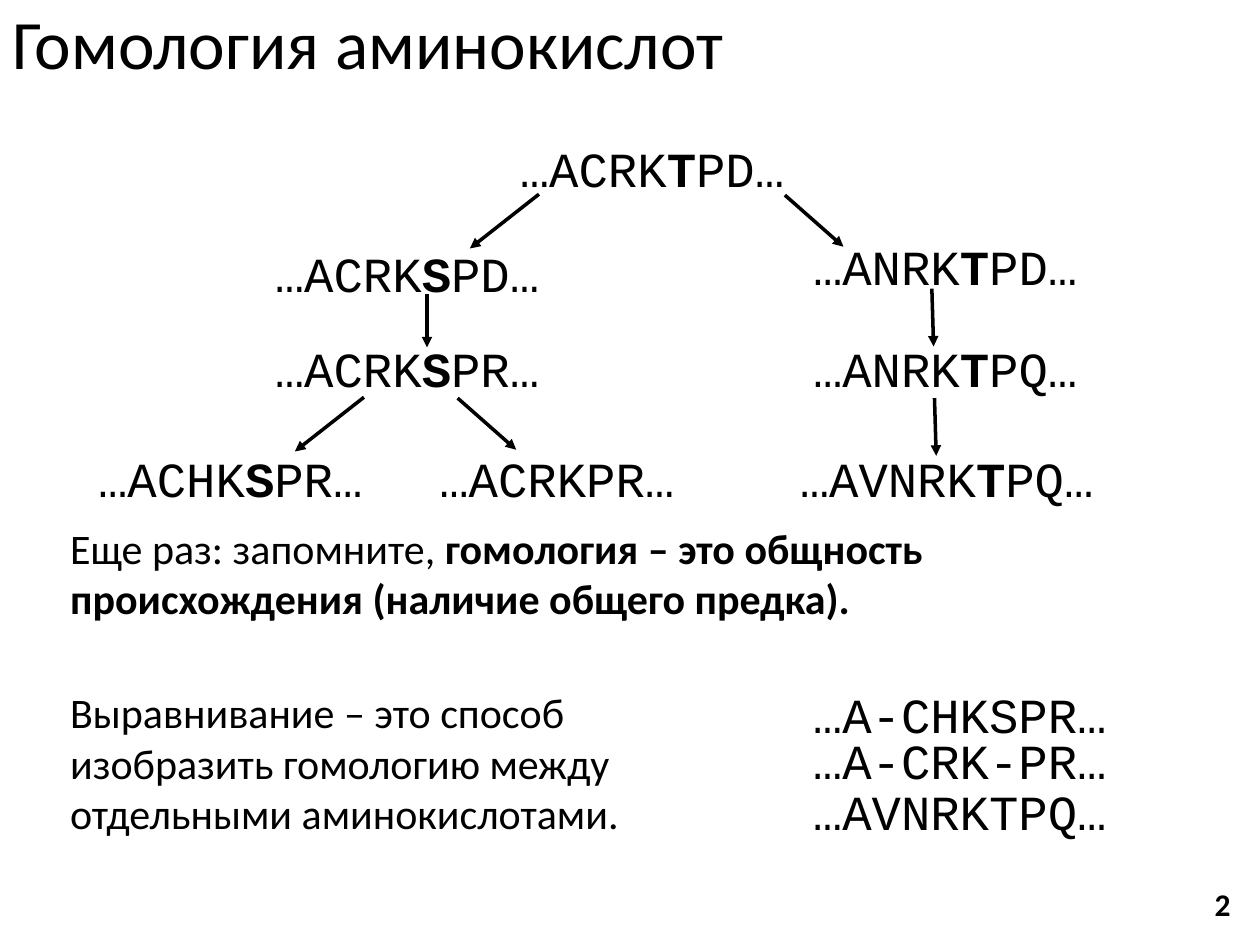
from dataclasses import dataclass

from lxml.etree import SubElement
from pptx import Presentation
from pptx.dml.color import RGBColor
from pptx.enum.shapes import MSO_CONNECTOR
from pptx.enum.text import MSO_ANCHOR, MSO_AUTO_SIZE, PP_ALIGN
from pptx.oxml.ns import qn
from pptx.slide import Slide
from pptx.util import Pt


def color(hex_code):
    return RGBColor.from_string(hex_code)


@dataclass
class HomologySlide:
    slide: Slide
    ink: str = "000000"
    text_font: str = "Calibri"
    sequence_font: str = "Courier New"
    sequence_size: float = 28
    letter_width: float = 16.8
    box_padding: float = 15.4

    def add_runs(self, paragraph, text, font_name, size):
        """Fill a paragraph; parts between asterisks become bold."""
        for index, part in enumerate(text.split("*")):
            if not part:
                continue
            run = paragraph.add_run()
            run.text = part
            run.font.name = font_name
            run.font.size = Pt(size)
            run.font.bold = index % 2 == 1
            run.font.color.rgb = color(self.ink)

    def title(self, text):
        heading = self.slide.shapes.title
        heading.left, heading.top = Pt(0), Pt(0)
        heading.width, heading.height = Pt(720), Pt(54)
        frame = heading.text_frame
        frame.auto_size = MSO_AUTO_SIZE.NONE
        frame.vertical_anchor = MSO_ANCHOR.MIDDLE
        paragraph = frame.paragraphs[0]
        paragraph.alignment = PP_ALIGN.LEFT
        paragraph.line_spacing = 0.9
        self.add_runs(paragraph, text, self.text_font, 39.6)

    def text(self, text, left, top, width, height, size=24, font_name=None, wrap=True):
        box = self.slide.shapes.add_textbox(Pt(left), Pt(top), Pt(width), Pt(height))
        frame = box.text_frame
        frame.word_wrap = wrap
        frame.auto_size = MSO_AUTO_SIZE.SHAPE_TO_FIT_TEXT
        self.add_runs(frame.paragraphs[0], text, font_name or self.text_font, size)

    def sequence(self, letters, left, top):
        width = len(letters.replace("*", "")) * self.letter_width + self.box_padding
        self.text(letters, left, top, width, 41, self.sequence_size,
                  self.sequence_font, wrap=False)

    def arrow(self, x1, y1, x2, y2):
        connector = self.slide.shapes.add_connector(
            MSO_CONNECTOR.STRAIGHT, Pt(x1), Pt(y1), Pt(x2), Pt(y2))
        connector.line.color.rgb = color(self.ink)
        connector.line.width = Pt(2)
        properties = connector._element.spPr
        SubElement(properties.find(qn("a:ln")), qn("a:tailEnd"), type="triangle")
        SubElement(properties, qn("a:effectLst"))


def main():
    presentation = Presentation()
    presentation.slide_width, presentation.slide_height = Pt(720), Pt(540)
    title_only = presentation.slide_layouts[5]
    page = HomologySlide(presentation.slides.add_slide(title_only))

    page.title("Гомология аминокислот")

    # Family tree of the sequences
    left_branch, right_branch = 150, 457.5
    third_row, leaf_row = 190, 252.5
    family = [
        ("…ACRK*T*PD…", 290, 75.5),
        ("…ACRK*S*PD…", left_branch, 135.5),
        ("…ACRK*S*PR…", left_branch, third_row),
        ("…ACHK*S*PR…", 49, leaf_row),
        ("…ACRKPR…", 244, leaf_row),
        ("…ANRK*T*PD…", right_branch, 131.5),
        ("…ANRK*T*PQ…", right_branch, third_row),
        ("…AVNRK*T*PQ…", 450, leaf_row),
    ]
    for letters, left, top in family:
        page.sequence(letters, left, top)

    # Descent arrows
    descents = [
        (308, 111, 268.5, 142),
        (244, 168, 244, 198.5),
        (208, 227, 168.5, 258),
        (261.5, 227.5, 295, 257),
        (448.5, 111.5, 482, 141),
        (532.5, 165, 533.5, 198),
        (534, 227.5, 535, 260.5),
    ]
    for descent in descents:
        page.arrow(*descent)

    # Definitions
    page.text("Еще раз: запомните, *гомология – это общность "
              "происхождения (наличие общего предка).*", 33, 295, 654.5, 65.5)
    page.text("Выравнивание – это способ изобразить гомологию между "
              "отдельными аминокислотами.", 33, 389, 361, 94.5)

    # Alignment
    alignment = [("…A-CHKSPR…", 387.5), ("…A-CRK-PR…", 414), ("…AVNRKTPQ…", 443)]
    for letters, top in alignment:
        page.sequence(letters, right_branch, top)

    # Page number
    page.text("*2*", 687, 502, 23.5, 29, size=18, wrap=False)

    presentation.save("out.pptx")


if __name__ == "__main__":
    main()
